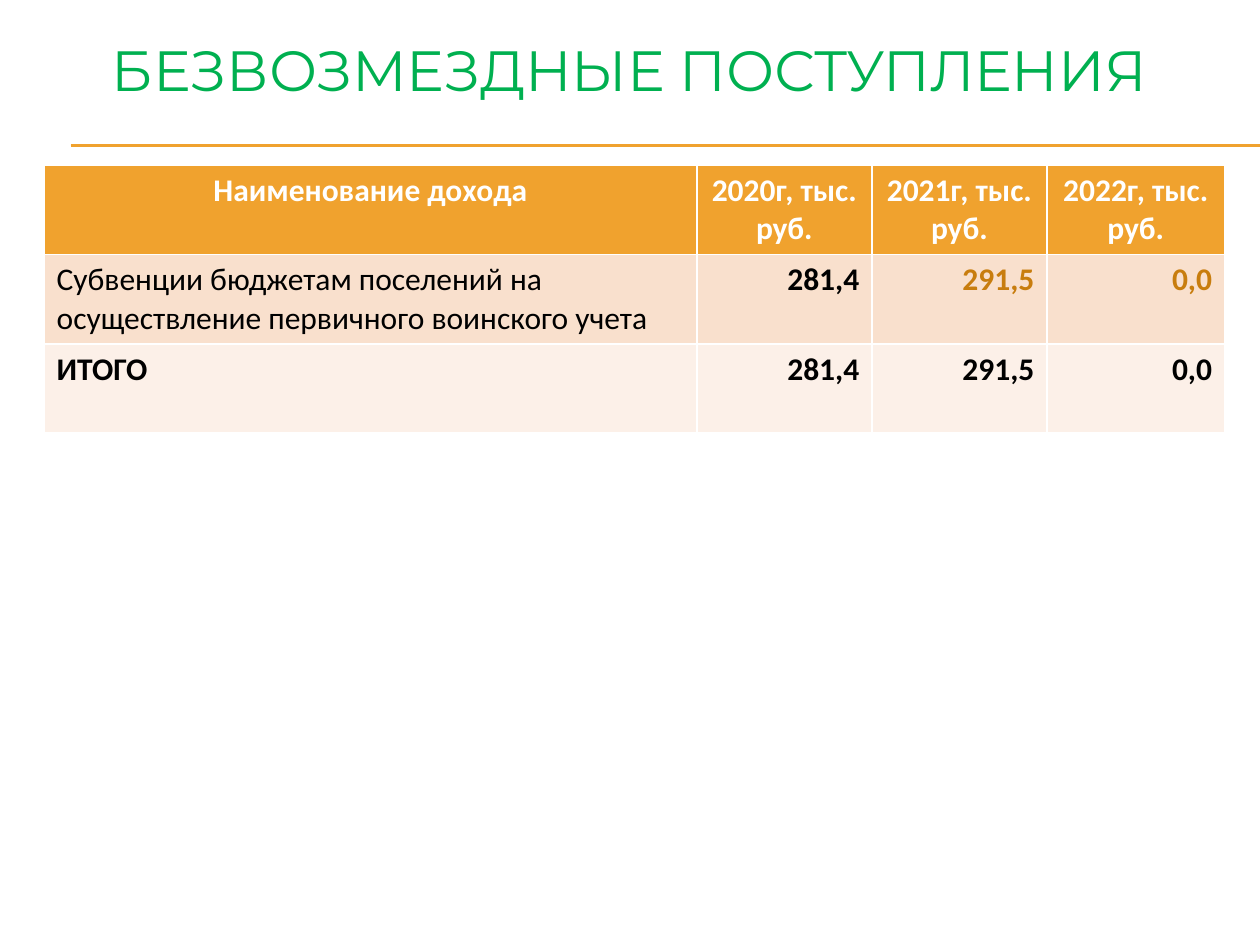
from lxml.etree import SubElement
from pptx import Presentation
from pptx.dml.color import RGBColor
from pptx.enum.shapes import MSO_CONNECTOR
from pptx.enum.text import MSO_ANCHOR, MSO_AUTO_SIZE, PP_ALIGN
from pptx.oxml.ns import qn
from pptx.util import Inches, Pt

GREEN = RGBColor(0x00, 0xB0, 0x50)
ORANGE = RGBColor(0xF0, 0xA2, 0x2E)
DARK_ORANGE = RGBColor(0xC8, 0x7D, 0x0E)
PEACH = RGBColor(0xF9, 0xE0, 0xCD)
PALE_PEACH = RGBColor(0xFC, 0xF0, 0xE8)
WHITE = RGBColor(0xFF, 0xFF, 0xFF)
BLACK = RGBColor(0x00, 0x00, 0x00)

COLUMN_WIDTHS = [5.18, 1.39, 1.39, 1.41]
ROW_HEIGHTS = [0.7, 0.71, 0.7]
ROW_FILLS = [ORANGE, PEACH, PALE_PEACH]
INCOME = [
    ["Наименование дохода"] + [f"{year}г, тыс. руб." for year in (2020, 2021, 2022)],
    ["Субвенции бюджетам поселений на осуществление первичного воинского учета",
     "281,4", "291,5", "0,0"],
    ["ИТОГО", "281,4", "291,5", "0,0"],
]


def place_title(slide, left, top, width, height):
    title = slide.shapes.title
    title.left, title.top, title.width, title.height = left, top, width, height
    frame = title.text_frame
    frame.text = "БЕЗВОЗМЕЗДНЫЕ ПОСТУПЛЕНИЯ"
    frame.word_wrap = True
    frame.auto_size = MSO_AUTO_SIZE.NONE
    frame.vertical_anchor = MSO_ANCHOR.MIDDLE
    paragraph = frame.paragraphs[0]
    paragraph.alignment = PP_ALIGN.CENTER
    paragraph.font.name = "Montserrat"
    paragraph.font.size = Pt(32.4)
    paragraph.font.color.rgb = GREEN


def add_double_rule(slide, left, top, width, gap):
    for y in (top, top + gap):
        rule = slide.shapes.add_connector(
            MSO_CONNECTOR.STRAIGHT, left, y, left + width, y)
        rule.line.color.rgb = ORANGE
        rule.line.width = Pt(0.75)
        SubElement(rule._element.spPr, qn("a:effectLst"))


def cell_style(row, column):
    if row == 0:
        return PP_ALIGN.CENTER, WHITE, True
    if column == 0:
        return PP_ALIGN.LEFT, BLACK, row == 2
    is_forecast = row == 1 and column > 1
    return PP_ALIGN.RIGHT, DARK_ORANGE if is_forecast else BLACK, True


def fill_cell(cell, text, fill, alignment, color, bold):
    cell.fill.solid()
    cell.fill.fore_color.rgb = fill
    cell.text = text
    paragraph = cell.text_frame.paragraphs[0]
    paragraph.alignment = alignment
    paragraph.font.name = "Calibri"
    paragraph.font.size = Pt(18)
    paragraph.font.bold = bold
    paragraph.font.color.rgb = color


def add_income_table(slide, left, top, width, height):
    table = slide.shapes.add_table(
        len(INCOME), len(COLUMN_WIDTHS), left, top, width, height).table
    for column, share in zip(table.columns, COLUMN_WIDTHS):
        column.width = int(width * share / sum(COLUMN_WIDTHS))
    for row, share in zip(table.rows, ROW_HEIGHTS):
        row.height = int(height * share / sum(ROW_HEIGHTS))
    for r, texts in enumerate(INCOME):
        for c, text in enumerate(texts):
            fill_cell(table.cell(r, c), text, ROW_FILLS[r], *cell_style(r, c))


def main():
    presentation = Presentation()
    presentation.slide_width = Inches(10)
    presentation.slide_height = Inches(7.5)
    slide = presentation.slides.add_slide(presentation.slide_layouts[5])
    slide.background.fill.solid()
    slide.background.fill.fore_color.rgb = WHITE
    add_double_rule(slide, Inches(0.56), Inches(1.15), Inches(9.44), Inches(0.01))
    place_title(slide, Inches(0.35), Inches(0), Inches(9.29), Inches(1.09))
    add_income_table(slide, Inches(0.35), Inches(1.31), Inches(9.37), Inches(2.11))
    presentation.save("out.pptx")


if __name__ == "__main__":
    main()
